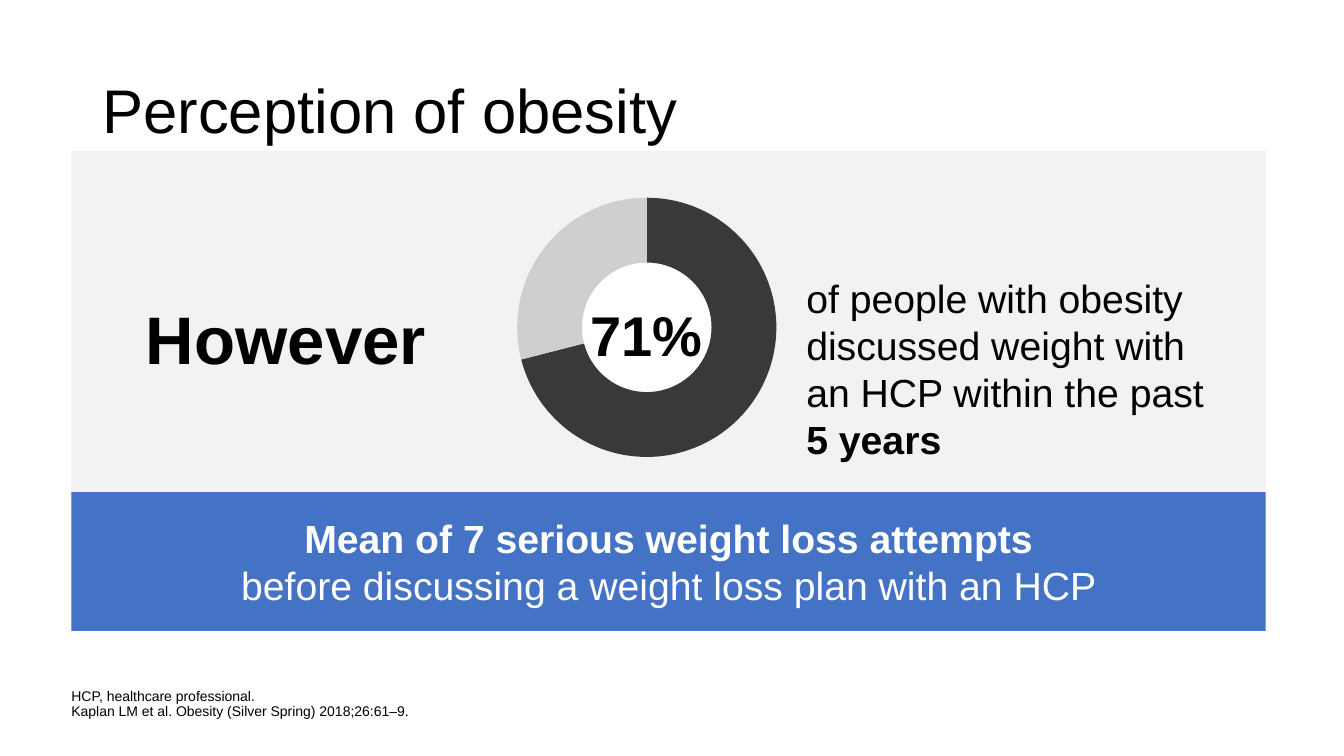
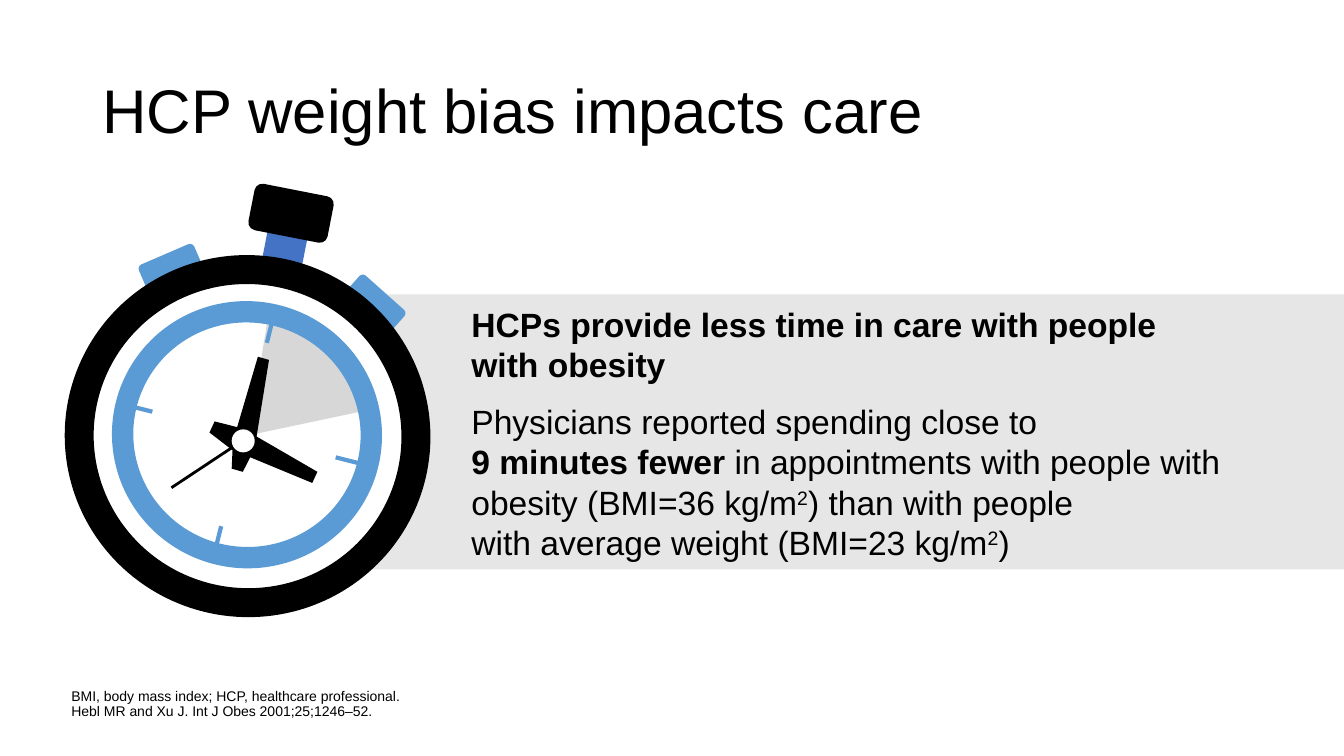
from math import cos, radians, sin

from lxml import etree
from pptx import Presentation
from pptx.chart.data import CategoryChartData
from pptx.dml.color import RGBColor
from pptx.enum.chart import XL_CHART_TYPE
from pptx.enum.shapes import MSO_CONNECTOR, MSO_SHAPE
from pptx.enum.text import MSO_ANCHOR, PP_ALIGN
from pptx.oxml import parse_xml
from pptx.oxml.ns import nsdecls, qn
from pptx.util import Cm, Pt

# Enum members
RECT = MSO_SHAPE.RECTANGLE
ROUND = MSO_SHAPE.ROUNDED_RECTANGLE
OVAL = MSO_SHAPE.OVAL
RING = MSO_SHAPE.DONUT
PIE = MSO_SHAPE.PIE
LINE = MSO_CONNECTOR.STRAIGHT
RING_CHART = XL_CHART_TYPE.DOUGHNUT
LEFT, MID = PP_ALIGN.LEFT, PP_ALIGN.CENTER
TOP, CORE, LOW = MSO_ANCHOR.TOP, MSO_ANCHOR.MIDDLE, MSO_ANCHOR.BOTTOM

# Shared look
FONT = "Arial"
BLACK = RGBColor(0x00, 0x00, 0x00)
WHITE = RGBColor(0xFF, 0xFF, 0xFF)
PALE = RGBColor(0xF2, 0xF2, 0xF2)
MIST = RGBColor(0xE7, 0xE6, 0xE6)
STONE = RGBColor(0xD0, 0xCE, 0xCE)
GREY = RGBColor(0xA5, 0xA5, 0xA5)
COAL = RGBColor(0x3B, 0x38, 0x38)
BLUE = RGBColor(0x44, 0x72, 0xC4)
SKY = RGBColor(0x5B, 0x9B, 0xD5)
EDGE, WIDE = 1.8, 30.1
PAD = (0.25, 0.13)
BARE = (0, 0)

# Run styles
PLAIN, BOLD, RAISED = "plain", "bold", "raised"


def style(run, size, color, kind=PLAIN):
    font = run.font
    font.name, font.size, font.bold = FONT, Pt(size), kind == BOLD
    font.color.rgb = color
    if kind == RAISED:
        run._r.get_or_add_rPr().set("baseline", "30000")


def write(frame, paras, size, color=BLACK, align=LEFT, anchor=TOP,
          pad=PAD, after=0, pitch=1.0):
    """Each paragraph is a list of (text, kind); a newline breaks the line."""
    frame.word_wrap = True
    frame.vertical_anchor = anchor
    frame.margin_left = frame.margin_right = Cm(pad[0])
    frame.margin_top = frame.margin_bottom = Cm(pad[1])
    for i, parts in enumerate(paras):
        para = frame.add_paragraph() if i else frame.paragraphs[0]
        para.alignment, para.line_spacing = align, pitch
        para.space_after = Pt(after)
        for text, kind in parts:
            for j, line in enumerate(text.split("\n")):
                if j:
                    para.add_line_break()
                if line:
                    run = para.add_run()
                    run.text = line
                    style(run, size, color, kind)


def add_text(slide, box, paras, size, **look):
    shape = slide.shapes.add_textbox(*map(Cm, box))
    write(shape.text_frame, paras, size, **look)


def paint(shape, color):
    shape.shadow.inherit = False
    shape.fill.solid()
    shape.fill.fore_color.rgb = color
    shape.line.fill.background()
    return shape


def add_form(shapes, kind, box, color, turn=0, adjust=()):
    shape = paint(shapes.add_shape(kind, *map(Cm, box)), color)
    shape.rotation = turn
    for i, value in enumerate(adjust):
        shape.adjustments[i] = value
    return shape


def add_line(shapes, start, end, color, width):
    line = shapes.add_connector(LINE, *map(Cm, (*start, *end)))
    line.line.color.rgb = color
    line.line.width = Pt(width)
    etree.SubElement(line._element.spPr, qn("a:effectLst"))


def add_hand(shapes, points):
    spots = [(Cm(x), Cm(y)) for x, y in points]
    pen = shapes.build_freeform(*spots[0])
    pen.add_line_segments(spots[1:], close=True)
    paint(pen.convert_to_shape(), BLACK)


def add_ring(slide, box, values, colors):
    data = CategoryChartData()
    data.categories = [str(i + 1) for i in range(len(values))]
    data.add_series("Series 1", values)
    chart = slide.shapes.add_chart(RING_CHART, *map(Cm, box), data).chart
    chart.has_legend = chart.has_title = False
    chart.font.name, chart.font.size = FONT, Pt(10)
    chart.font.color.rgb = BLACK
    plot = chart.plots[0]
    plot.vary_by_categories = True
    for i, color in enumerate(colors):
        part = plot.series[0].points[i].format
        part.fill.solid()
        part.fill.fore_color.rgb = color
        part.line.fill.background()
    plot._element.find(qn("c:holeSize")).set("val", "61")
    # Centre a square plot area in the frame
    high = 0.9
    wide = high * box[3] / box[2]
    area = plot._element.getparent()
    for old in area.findall(qn("c:layout")):
        area.remove(old)
    spots = {"x": (1 - wide) / 2, "y": (1 - high) / 2, "w": wide, "h": high}
    rules = "".join(f'<c:{k} val="{v:.3f}"/>' for k, v in spots.items())
    area.insert(0, parse_xml(
        f'<c:layout {nsdecls("c")}><c:manualLayout>'
        '<c:layoutTarget val="inner"/><c:xMode val="edge"/>'
        f'<c:yMode val="edge"/>{rules}</c:manualLayout></c:layout>'))


def add_clock(slide):
    shapes = slide.shapes.add_group_shape().shapes
    tilt = 11.1
    # Case, buttons and dial
    add_form(shapes, ROUND, (8.71, 7.29, 1.52, 0.69), SKY, 41.7)
    add_form(shapes, RECT, (6.68, 5.66, 1.02, 1.07), BLUE, tilt)
    add_form(shapes, ROUND, (3.53, 6.38, 1.52, 0.69), SKY, 336.7)
    add_form(shapes, OVAL, (2.16, 6.99, 8.2, 8.1), WHITE, tilt)
    add_form(shapes, RING, (1.63, 6.43, 9.22, 9.12), BLACK, tilt, [0.08])
    add_form(shapes, ROUND, (6.32, 4.78, 2.03, 1.19), BLACK, tilt)
    wedge = add_form(shapes, PIE, (3.05, 8.05, 6.43, 5.84), GREY,
                     adjust=[167.62, 208.84])
    tint = wedge._element.spPr.find(qn("a:solidFill"))[0]
    etree.SubElement(tint, qn("a:alpha")).set("val", "44000")
    add_form(shapes, RING, (2.82, 7.59, 6.81, 6.73), SKY, 13.2, [0.08])
    # Hands
    add_hand(shapes, [(6.5, 8.99), (6.78, 9.07), (6.43, 11.23),
                      (6.43, 11.28), (6.12, 11.89), (5.84, 11.81),
                      (5.87, 11.13)])
    add_hand(shapes, [(8, 11.89), (7.87, 12.17), (5.84, 11.33),
                      (5.28, 10.9), (5.41, 10.62), (6.12, 10.8)])
    add_line(shapes, (5.92, 11.23), (4.32, 12.29), BLACK, 2)
    add_form(shapes, OVAL, (5.84, 10.82, 0.58, 0.58), WHITE)
    # Quarter ticks
    for turn in range(0, 360, 90):
        angle = radians(turn + 14)
        ends = [(6.15 + r * sin(angle), 10.95 - r * cos(angle))
                for r in (3.2, 2.38)]
        add_line(shapes, *ends, SKY, 3)


def open_slide(deck, title, note):
    slide = deck.slides.add_slide(deck.slide_layouts[5])
    head = slide.shapes.title
    head.left, head.top, head.width, head.height = map(
        Cm, (2.33, 1.01, 29.21, 3.68))
    write(head.text_frame, [[(title, PLAIN)]], 44, anchor=CORE, pitch=0.9)
    add_text(slide, (EDGE, 17.25, 24.03, 0.89), [[(note, PLAIN)]], 10,
             anchor=LOW, pad=BARE, pitch=0.9)
    return slide


def show_view(deck):
    slide = open_slide(
        deck, "Perception of obesity",
        "HCP, healthcare professional.\n"
        "Kaplan LM et al. Obesity (Silver Spring) 2018;26:61–9.")
    add_form(slide.shapes, RECT, (EDGE, 3.81, WIDE, 11.96), PALE)
    add_text(slide, (3.68, 7.49, 9, 2.06), [[("However", BOLD)]], 48,
             pad=BARE)
    # Share of people
    add_form(slide.shapes, OVAL, (14.15, 5.97, 4.27, 4.27), WHITE)
    add_ring(slide, (10.8, 4.62, 11, 7.26), (71, 29), (COAL, STONE))
    add_text(slide, (14.58, 7.44, 3.43, 1.96), [[("71%", BOLD)]], 40,
             align=MID, pad=(0, 0.13))
    add_text(slide, (20.07, 6.78, 11.33, 5.05), [[
        ("of people with obesity discussed weight with an HCP "
         "within the past ", PLAIN),
        ("5 years", BOLD)]], 28)
    # Key message
    band = add_form(slide.shapes, RECT, (EDGE, 12.4, WIDE, 3.5), BLUE)
    write(band.text_frame, [[
        ("Mean of 7 serious weight loss attempts\n", BOLD),
        ("before discussing a weight loss plan with an HCP", PLAIN)]],
        28, WHITE, MID, CORE)


def show_care(deck):
    slide = open_slide(
        deck, "HCP weight bias impacts care",
        "BMI, body mass index; HCP, healthcare professional.\n"
        "Hebl MR and Xu J. Int J Obes 2001;25;1246–52.")
    add_form(slide.shapes, RECT, (6.07, 7.42, 27.8, 6.93), MIST)
    add_clock(slide)
    add_text(slide, (11.63, 7.52, 20.78, 6.83), [
        [("HCPs provide less time in care with people \nwith obesity",
          BOLD)],
        [("Physicians reported spending close to \n", PLAIN),
         ("9 minutes fewer", BOLD),
         (" in appointments with people with obesity (BMI=36 kg/m", PLAIN),
         ("2", RAISED),
         (") than with people\nwith average weight (BMI=23 kg/m", PLAIN),
         ("2", RAISED), (")", PLAIN)]], 24, after=12)


def main():
    deck = Presentation()
    deck.slide_width, deck.slide_height = Cm(33.87), Cm(19.05)
    show_view(deck)
    show_care(deck)
    deck.save("out.pptx")


if __name__ == "__main__":
    main()
